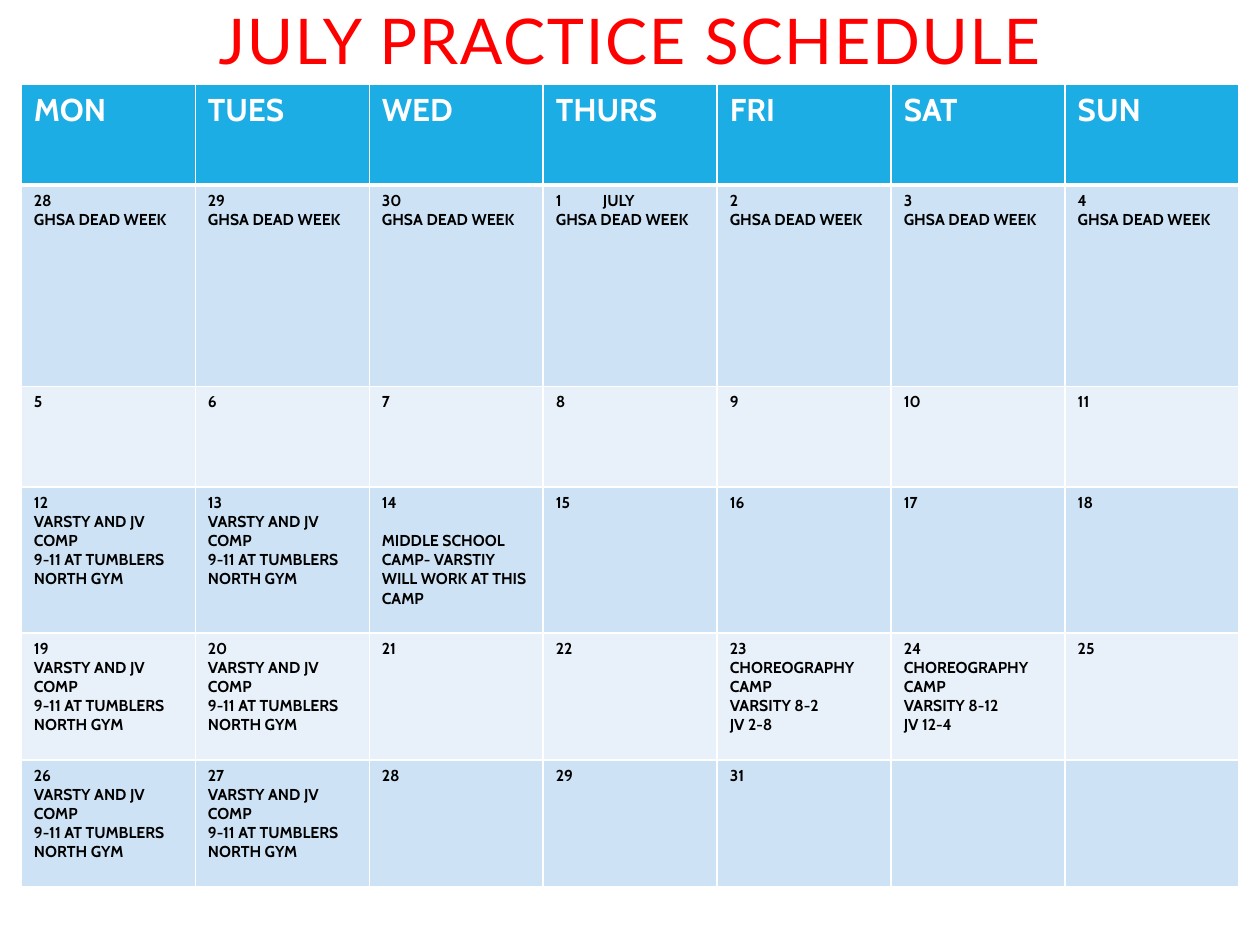
"""Build a one-slide monthly practice calendar."""
from lxml import etree
from pptx import Presentation
from pptx.dml.color import RGBColor
from pptx.enum.text import MSO_ANCHOR, MSO_AUTO_SIZE, PP_ALIGN
from pptx.oxml.ns import qn
from pptx.util import Cm, Pt

MIDDLE = MSO_ANCHOR.MIDDLE
NO_FIT = MSO_AUTO_SIZE.NONE
CENTER = PP_ALIGN.CENTER

DAYS = ["MON", "TUES", "WED", "THURS", "FRI", "SAT", "SUN"]
WEEKS = [
    [28, 29, 30, "JULY", 2, 3, 4],
    range(5, 12),
    range(12, 19),
    range(19, 26),
    [26, 27, 28, 29, 31],
]
HEIGHTS = [2.03, 4.06, 2.03, 2.94, 2.56, 2.56]
COMP = ["VARSTY AND JV COMP", "9-11 AT TUMBLERS NORTH GYM"]
CAMP = "CHOREOGRAPHY CAMP"
NOTES = {(1, col): ["GHSA DEAD WEEK"] for col in range(7)}
NOTES |= {(row, col): COMP for row in (3, 4, 5) for col in (0, 1)}
NOTES |= {
    (3, 2): ["MIDDLE SCHOOL CAMP- VARSTIY WILL WORK AT THIS CAMP"],
    (4, 4): [CAMP, "VARSITY 8-2", "JV 2-8"],
    (4, 5): [CAMP, "VARSITY 8-12", "JV 12-4"],
}


def color(code):
    return RGBColor.from_string(code)


class Board:
    """Hold the style and the current slide."""

    blue, dark, light = "1CADE4", "CDE3F5", "E8F1FA"
    white, black, red = "FFFFFF", "000000", "FF0000"
    head, body = "Lato", "Cabin"

    def __init__(self, deck):
        self.slide = deck.slides.add_slide(deck.slide_layouts[5])

    def style(self, para, font, size, code, bold):
        for run in para.runs:
            run.font.name = font
            run.font.size = Pt(size)
            run.font.bold = bold
            run.font.color.rgb = color(code)

    def title(self, text, left, top, width, height):
        shape = self.slide.shapes.title
        shape.left, shape.top = Cm(left), Cm(top)
        shape.width, shape.height = Cm(width), Cm(height)
        shape.fill.solid()
        shape.fill.fore_color.rgb = color(self.white)
        frame = shape.text_frame
        frame.text = text
        frame.word_wrap = True
        frame.auto_size = NO_FIT
        frame.vertical_anchor = MIDDLE
        para = frame.paragraphs[0]
        para.alignment = CENTER
        para.line_spacing = 0.8
        self.style(para, self.head, 36, self.red, False)
        para.runs[0]._r.get_or_add_rPr().set("spc", "100")

    def edge(self, cell, side, width):
        props = cell._tc.get_or_add_tcPr()
        line = etree.SubElement(props, qn(f"a:ln{side}"), w=str(Pt(width)))
        fill = etree.SubElement(line, qn("a:solidFill"))
        etree.SubElement(fill, qn("a:srgbClr"), val=self.white)

    def cell(self, cell, lines, row):
        for side in "LRTB":
            thick = (row, side) in ((0, "B"), (1, "T"))
            self.edge(cell, side, 3 if thick else 1)
        shade = self.dark if row % 2 else self.light
        cell.fill.solid()
        cell.fill.fore_color.rgb = color(shade if row else self.blue)
        cell.text_frame.text = "\n".join(lines)
        size, ink = (9, self.black) if row else (18, self.white)
        for para in cell.text_frame.paragraphs:
            self.style(para, self.body, size, ink, True)

    def number(self, para):
        props = para._p.get_or_add_pPr()
        props.set("marL", str(Cm(0.95)))
        props.set("indent", str(-Cm(0.95)))
        etree.SubElement(props, qn("a:buFont"), typeface="+mj-lt")
        etree.SubElement(props, qn("a:buAutoNum"), type="arabicPlain")

    def table(self, left, top, width):
        frame = self.slide.shapes.add_table(
            len(HEIGHTS), len(DAYS), Cm(left), Cm(top), Cm(width), Cm(sum(HEIGHTS)))
        grid = frame.table
        for row, tall in enumerate(HEIGHTS):
            grid.rows[row].height = Cm(tall)
        for col, day in enumerate(DAYS):
            self.cell(grid.cell(0, col), [day], 0)
            for row, week in enumerate(WEEKS, 1):
                dates = [str(date) for date in week[col:col + 1]]
                self.cell(grid.cell(row, col), dates + NOTES.get((row, col), []), row)
        self.number(grid.cell(1, 3).text_frame.paragraphs[0])
        grid.cell(3, 2).text_frame.paragraphs[1].space_before = Pt(11)


def main():
    deck = Presentation()
    deck.slide_width, deck.slide_height = Cm(25.4), Cm(19.05)
    board = Board(deck)
    board.title("JULY PRACTICE SCHEDULE", 1.75, 0.2, 21.9, 1.47)
    board.table(0.43, 1.7, 24.55)
    deck.save("out.pptx")


if __name__ == "__main__":
    main()
